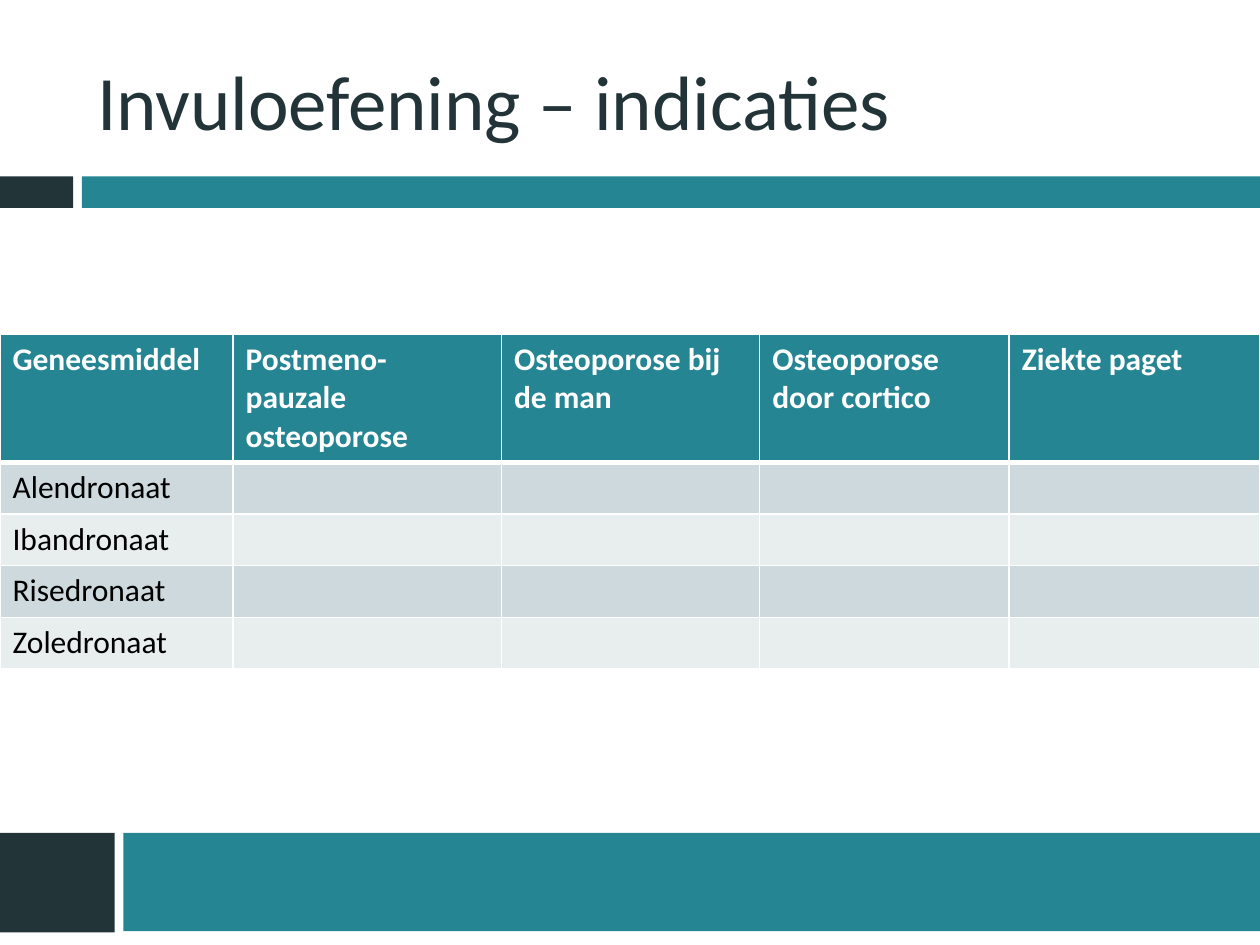
from lxml.etree import SubElement
from pptx import Presentation
from pptx.dml.color import RGBColor
from pptx.enum.shapes import MSO_SHAPE
from pptx.enum.text import MSO_ANCHOR, PP_ALIGN
from pptx.oxml.ns import qn
from pptx.util import Inches, Pt

COLORS = {"dark": "233438", "teal": "268593", "mid": "CDD9DC",
          "pale": "E8EDEE", "white": "FFFFFF", "black": "000000"}


def style(font, size, color, bold=False):
    font.name = "Calibri"
    font.size = Pt(size)
    font.bold = bold
    font.color.rgb = RGBColor.from_string(COLORS[color])


def border(cell, side, width):
    line = SubElement(cell._tc.get_or_add_tcPr(), qn(f"a:ln{side}"), w=str(Pt(width)))
    fill = SubElement(line, qn("a:solidFill"))
    SubElement(fill, qn("a:srgbClr"), val=COLORS["white"])


deck = Presentation()
deck.slide_width, deck.slide_height = Inches(10), Inches(7.5)
slide = deck.slides.add_slide(deck.slide_layouts[5])

bars = [(0, 1.4, 0.58, 0.25, "dark"), (0.65, 1.4, 9.35, 0.25, "teal"),
        (-0.01, 6.61, 0.92, 0.79, "dark"), (0.98, 6.61, 9.02, 0.78, "teal")]
for *box, color in bars:
    bar = slide.shapes.add_shape(MSO_SHAPE.RECTANGLE, *map(Inches, box))
    bar.shadow.inherit = False
    bar.fill.solid()
    bar.fill.fore_color.rgb = RGBColor.from_string(COLORS[color])
    bar.line.fill.background()

title = slide.shapes.title
title.left, title.top = Inches(0.67), Inches(0.25)
title.width, title.height = Inches(8.92), Inches(1.08)
title.text_frame.text = "Invuloefening – indicaties"
title.text_frame.vertical_anchor = MSO_ANCHOR.MIDDLE
head = title.text_frame.paragraphs[0]
head.alignment = PP_ALIGN.LEFT
style(head.runs[0].font, 44, "dark")

heads = ["Geneesmiddel", "Postmeno-\npauzale osteoporose", "Osteoporose bij de man",
         "Osteoporose door cortico", "Ziekte paget"]
drugs = ["Alendronaat", "Ibandronaat", "Risedronaat", "Zoledronaat"]
rows = [heads] + [[drug] + [""] * 4 for drug in drugs]
widths = [1.85, 2.13, 2.05, 1.98, 1.99]

table = slide.shapes.add_table(len(rows), len(heads), Inches(0), Inches(2.65),
                               Inches(10), Inches(2.66)).table
for col, width in zip(table.columns, widths):
    col.width = Inches(width)
for r, texts in enumerate(rows):
    table.rows[r].height = Inches(0.41 if r else 1.02)
    shade = ("mid" if r % 2 else "pale") if r else "teal"
    for c, text in enumerate(texts):
        cell = table.cell(r, c)
        for side in "LRTB":
            thick = (r == 0 and side == "B") or (r == 1 and side == "T")
            border(cell, side, 3 if thick else 1)
        cell.fill.solid()
        cell.fill.fore_color.rgb = RGBColor.from_string(COLORS[shade])
        cell.text_frame.text = text
        for para in cell.text_frame.paragraphs:
            for run in para.runs:
                style(run.font, 18, "black" if r else "white", r == 0)

deck.save("out.pptx")
